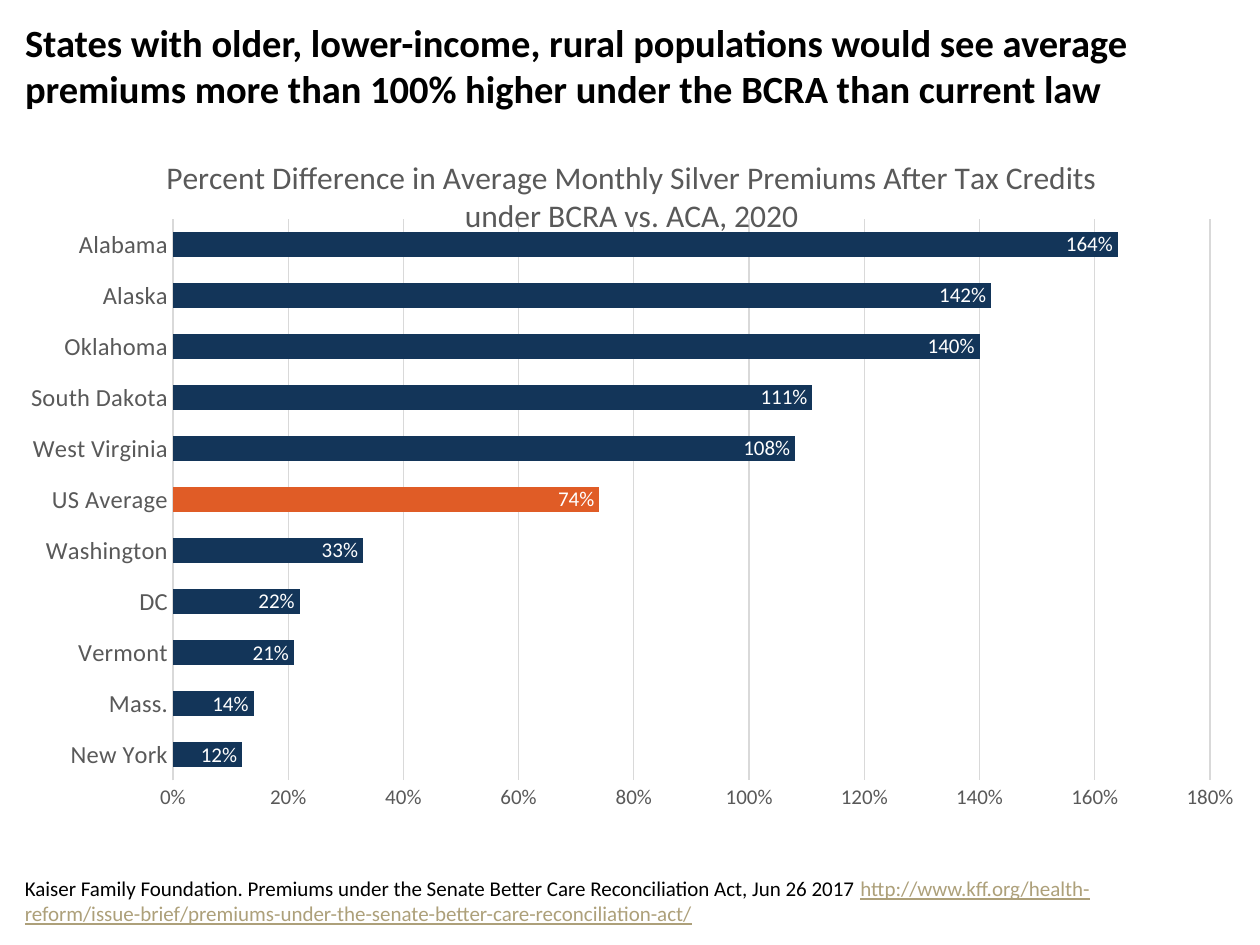
from lxml import etree
from pptx import Presentation
from pptx.chart.data import CategoryChartData
from pptx.dml.color import RGBColor
from pptx.enum.chart import XL_CHART_TYPE, XL_LABEL_POSITION, XL_TICK_MARK
from pptx.enum.text import MSO_ANCHOR, PP_ALIGN
from pptx.oxml.ns import qn
from pptx.util import Cm, Pt

BAR_STACKED = XL_CHART_TYPE.BAR_STACKED
INSIDE_END = XL_LABEL_POSITION.INSIDE_END
NO_TICK = XL_TICK_MARK.NONE
TOP, BOTTOM = MSO_ANCHOR.TOP, MSO_ANCHOR.BOTTOM
LEFT = PP_ALIGN.LEFT

BLACK = RGBColor(0x00, 0x00, 0x00)
WHITE = RGBColor(0xFF, 0xFF, 0xFF)
GRAY = RGBColor(0x59, 0x59, 0x59)
LIGHT_GRAY = RGBColor(0xD9, 0xD9, 0xD9)
NAVY = RGBColor(0x13, 0x35, 0x59)
ORANGE = RGBColor(0xE0, 0x5C, 0x26)
TAN = RGBColor(0xAD, 0xA0, 0x7A)
FONT = "Calibri"
HIGHLIGHT = "US Average"

PREMIUM_CHANGES = {
    "New York": 0.12, "Mass.": 0.14, "Vermont": 0.21, "DC": 0.22,
    "Washington": 0.33, HIGHLIGHT: 0.74, "West Virginia": 1.08,
    "South Dakota": 1.11, "Oklahoma": 1.4, "Alaska": 1.42, "Alabama": 1.64,
}


def add_text(para, text, size, color, bold=False, underline=False):
    span = para.add_run()
    span.text = text
    font = span.font
    font.name, font.size, font.bold, font.underline = FONT, Pt(size), bold, underline
    font.color.rgb = color


def place_in_chart(part, position, **settings):
    """Give a chart part a manual layout, in fractions of the chart."""
    for old_layout in part.findall(qn("c:layout")):
        part.remove(old_layout)
    layout = etree.Element(qn("c:layout"))
    manual = etree.SubElement(layout, qn("c:manualLayout"))
    for tag, value in settings.items():
        etree.SubElement(manual, qn(f"c:{tag}")).set("val", str(value))
    part.insert(position, layout)


deck = Presentation()
deck.slide_width, deck.slide_height = Cm(25.4), Cm(19.05)
page = deck.slides.add_slide(deck.slide_layouts[5])

# Title
title = page.shapes.title
title.left, title.top, title.width, title.height = Cm(0.25), Cm(0.25), Cm(25.15), Cm(2.54)
title.text_frame.word_wrap = True
title.text_frame.vertical_anchor = TOP
title_para = title.text_frame.paragraphs[0]
title_para.alignment = LEFT
add_text(title_para, "States with older, lower-income, rural populations would see average "
         "premiums more than 100% higher under the BCRA than current law",
         size=22, color=BLACK, bold=True)

# Bar chart
data = CategoryChartData(number_format="0%")
data.categories = list(PREMIUM_CHANGES)
data.add_series("Series 1", list(PREMIUM_CHANGES.values()))
chart = page.shapes.add_chart(
    BAR_STACKED, Cm(0.25), Cm(3.02), Cm(24.89), Cm(13.97), data).chart
chart.has_legend = False
chart.has_title = True
add_text(chart.chart_title.text_frame.paragraphs[0],
         "Percent Difference in Average Monthly Silver Premiums After Tax Credits "
         "under BCRA vs. ACA, 2020", size=18, color=GRAY)
chart.chart_title.include_in_layout = True

# Bars, with the average highlighted
plot = chart.plots[0]
plot.gap_width, plot.overlap = 103, 100
plot.vary_by_categories = False
series = plot.series[0]
average_point = series.points[list(PREMIUM_CHANGES).index(HIGHLIGHT)]
for bar, color in ((series, NAVY), (average_point, ORANGE)):
    bar.format.fill.solid()
    bar.format.fill.fore_color.rgb = color

# Bar labels and axes
labels = series.data_labels
labels.show_value = True
labels.position = INSIDE_END
states, percents = chart.category_axis, chart.value_axis
for axis in (states, percents):
    axis.major_tick_mark = axis.minor_tick_mark = NO_TICK
percents.minimum_scale, percents.maximum_scale, percents.major_unit = 0, 1.8, 0.2
percents.format.line.fill.background()
percents.has_major_gridlines = True
for line in (states.format.line, percents.major_gridlines.format.line):
    line.color.rgb = LIGHT_GRAY
    line.width = Pt(0.75)
for numbers in (labels, percents.tick_labels):
    numbers.number_format, numbers.number_format_is_linked = "0%", False

# Chart fonts
for owner, size, color in ((chart, 10, BLACK), (labels, 12, WHITE),
                           (states.tick_labels, 14, GRAY), (percents.tick_labels, 12, GRAY)):
    owner.font.name, owner.font.size = FONT, Pt(size)
    owner.font.color.rgb = color

# Chart title above the bars, and the plot below it
place_in_chart(chart.chart_title._element, 1, xMode="edge", yMode="edge", x=0.12, y=0)
place_in_chart(plot._element.getparent(), 0, layoutTarget="inner",
               xMode="edge", yMode="edge", x=0.13, y=0.1, w=0.84, h=0.81)

# Source note
note = page.shapes.add_textbox(Cm(0.25), Cm(17.27), Cm(23.11), Cm(1.52))
note.text_frame.word_wrap = True
note.text_frame.vertical_anchor = BOTTOM
note_para = note.text_frame.paragraphs[0]
add_text(note_para, "Kaiser Family Foundation. Premiums under the Senate Better Care "
         "Reconciliation Act, Jun 26 2017 ", size=12, color=BLACK)
add_text(note_para, "http://www.kff.org/health-reform/issue-brief/"
         "premiums-under-the-senate-better-care-reconciliation-act/",
         size=12, color=TAN, underline=True)

deck.save("out.pptx")
